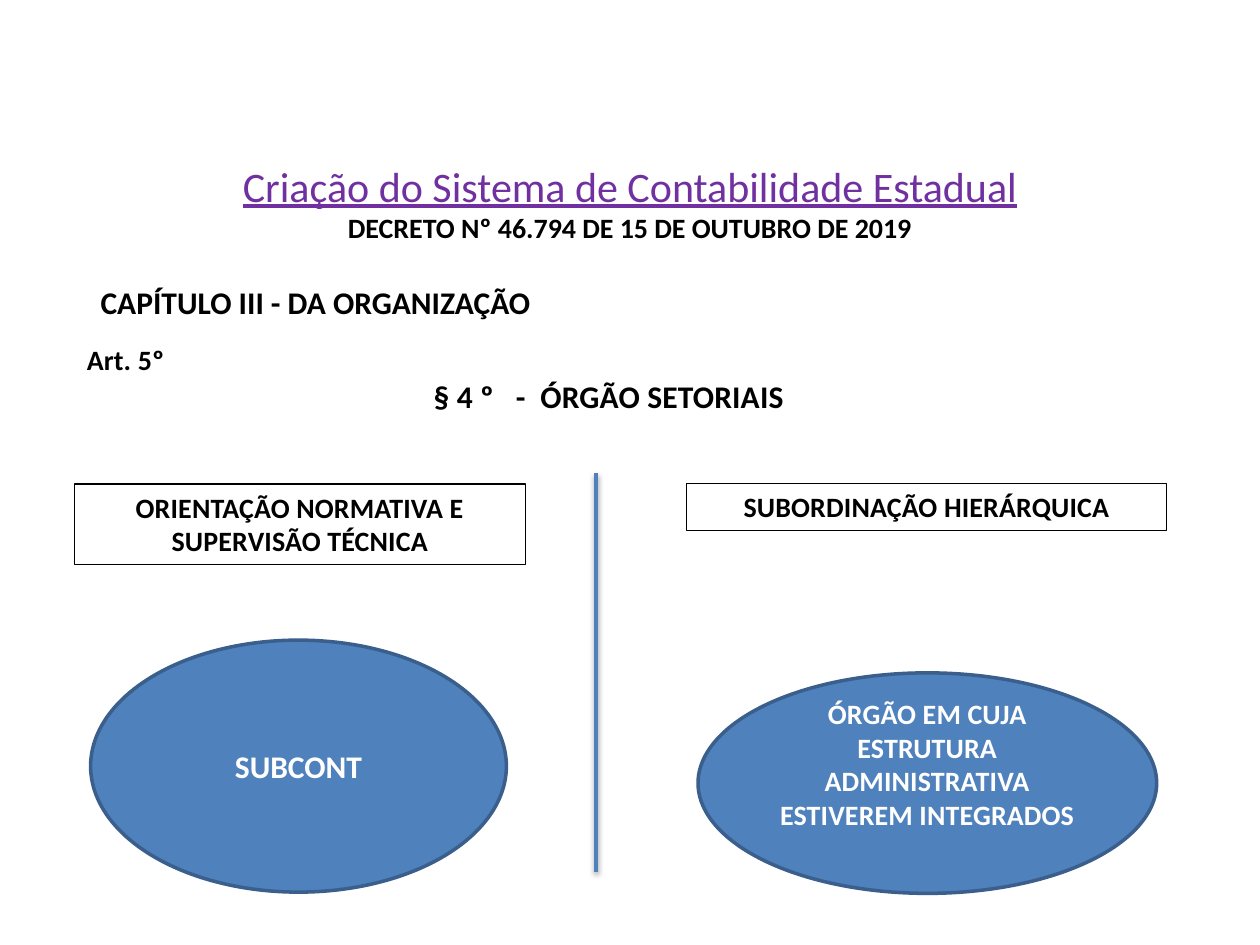
from lxml import etree
from pptx import Presentation
from pptx.dml.color import RGBColor
from pptx.enum.shapes import MSO_CONNECTOR, MSO_SHAPE
from pptx.enum.text import MSO_ANCHOR, PP_ALIGN
from pptx.oxml.ns import qn
from pptx.util import Pt

LEFT, CENTER = PP_ALIGN.LEFT, PP_ALIGN.CENTER
TOP, MIDDLE = MSO_ANCHOR.TOP, MSO_ANCHOR.MIDDLE
RECT, OVAL = MSO_SHAPE.RECTANGLE, MSO_SHAPE.OVAL
STRAIGHT = MSO_CONNECTOR.STRAIGHT

BLACK, WHITE, PURPLE = "000000", "FFFFFF", "7030A0"
BLUE, NAVY = "4F81BD", "3A5F8C"


def color(code):
    return RGBColor.from_string(code)


class Deck:
    font = "Calibri"

    def __init__(self, width, height):
        self.prs = Presentation()
        self.prs.slide_width, self.prs.slide_height = Pt(width), Pt(height)
        self.slide = self.prs.slides.add_slide(self.prs.slide_layouts[6])

    def run(self, para, words, size, ink=BLACK, bold=True, line=False, gap=0):
        run = para.add_run()
        run.text = words
        font = run.font
        font.name, font.size, font.bold = self.font, Pt(size), bold
        font.underline = line
        font.color.rgb = color(ink)
        if gap:
            run._r.get_or_add_rPr().set("spc", str(int(gap * 100)))

    def frame(self, shape, align, anchor):
        frame = shape.text_frame
        frame.word_wrap = True
        frame.vertical_anchor = anchor
        para = frame.paragraphs[0]
        para.alignment = align
        return para

    def text(self, box, align=LEFT):
        shape = self.slide.shapes.add_textbox(*map(Pt, box))
        return self.frame(shape, align, TOP)

    def shape(self, kind, box, fill, edge, width, anchor, foot=3.6):
        shape = self.slide.shapes.add_shape(kind, *map(Pt, box))
        shape.shadow.inherit = False
        if fill:
            shape.fill.solid()
            shape.fill.fore_color.rgb = color(fill)
        else:
            shape.fill.background()
        shape.line.color.rgb = color(edge)
        shape.line.width = Pt(width)
        shape.text_frame.margin_bottom = Pt(foot)
        return self.frame(shape, CENTER, anchor)

    def label(self, box):
        return self.shape(RECT, box, None, BLACK, 0.75, TOP)

    def oval(self, box, foot=3.6):
        return self.shape(OVAL, box, BLUE, NAVY, 2, MIDDLE, foot)

    def rule(self, x, top, end):
        rule = self.slide.shapes.add_connector(
            STRAIGHT, Pt(x), Pt(top), Pt(x), Pt(end))
        rule.line.color.rgb = color(BLUE)
        rule.line.width = Pt(2)
        # Soft shadow below the line
        props = rule._element.spPr
        effects = etree.SubElement(props, qn("a:effectLst"))
        shade = etree.SubElement(
            effects, qn("a:outerShdw"), blurRad=str(Pt(3.1)),
            dist=str(Pt(1.6)), dir="5400000", rotWithShape="0")
        tint = etree.SubElement(shade, qn("a:srgbClr"), val=BLACK)
        etree.SubElement(tint, qn("a:alpha"), val="38000")


def main():
    deck = Deck(720, 540)

    # Title
    title = deck.text((36, 88, 648, 90), CENTER)
    deck.run(title, "Criação do Sistema de Contabilidade Estadual", 24,
             PURPLE, bold=False, line=True)
    title.add_line_break()
    deck.run(title, "DECRETO Nº 46.794 DE 15 DE OUTUBRO DE 2019", 16)

    # Chapter, article and paragraph
    deck.run(deck.text((50.4, 158.4, 349, 29)),
             "CAPÍTULO III - DA ORGANIZAÇÃO", 18)
    deck.run(deck.text((42.5, 192.2, 574, 26.6)), "Art. 5º", 16, gap=0.1)
    deck.run(deck.text((168.5, 211.7, 359, 29), CENTER),
             "§ 4 º   -  ÓRGÃO SETORIAIS", 18, gap=0.1)

    # Divider
    deck.rule(340.6, 270, 498.2)

    # Left side: guidance
    deck.run(deck.label((42.5, 276.5, 257.8, 46)),
             "ORIENTAÇÃO NORMATIVA E SUPERVISÃO TÉCNICA", 16, gap=0.1)
    deck.run(deck.oval((51.8, 365.8, 237.6, 144)), "SUBCONT", 18, WHITE)

    # Right side: hierarchy
    deck.run(deck.label((392.4, 276.5, 274.3, 26.6)),
             "SUBORDINAÇÃO HIERÁRQUICA", 16, gap=0.1)
    deck.run(deck.oval((398.9, 384.5, 262.1, 126), foot=25.6),
             "ÓRGÃO EM CUJA ESTRUTURA ADMINISTRATIVA ESTIVEREM INTEGRADOS",
             16, WHITE, gap=0.1)

    deck.prs.save("out.pptx")


if __name__ == "__main__":
    main()
